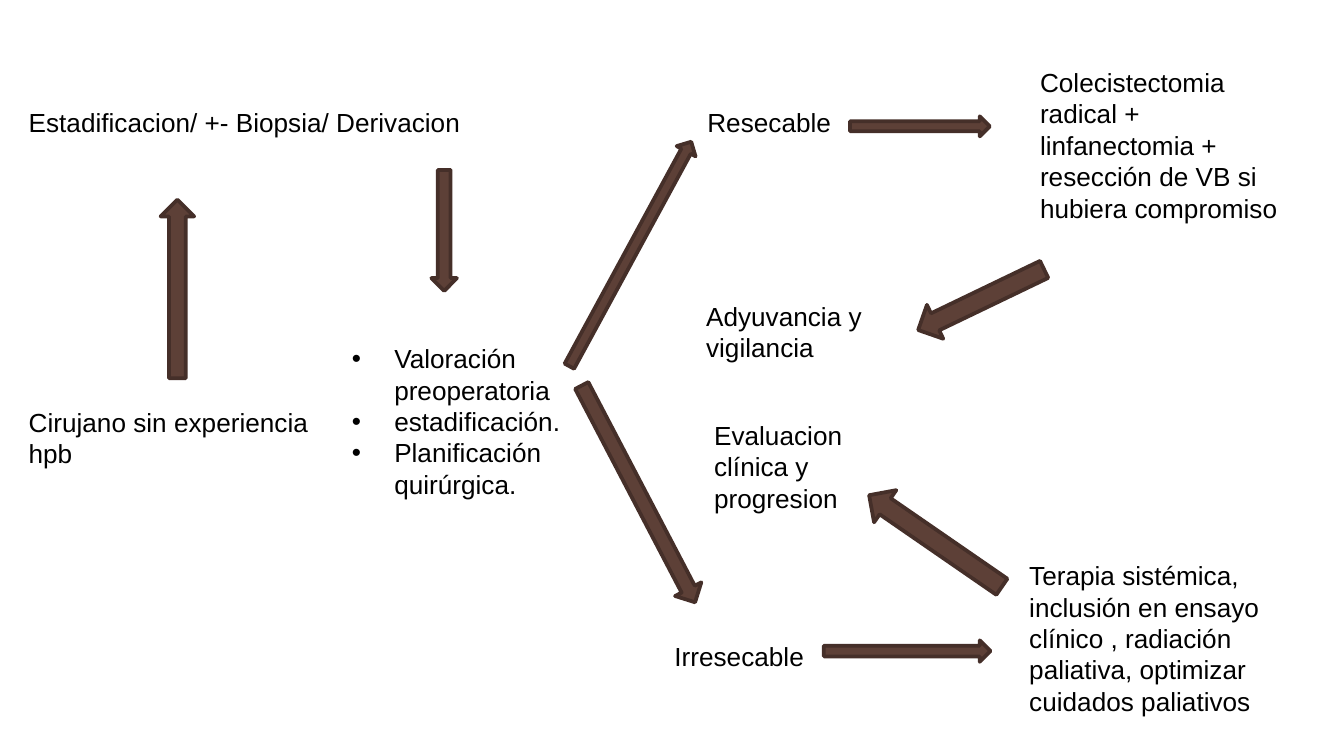
"""Build a slide with a treatment decision flow of texts and block arrows."""
from lxml import etree
from pptx import Presentation
from pptx.dml.color import RGBColor
from pptx.enum.shapes import MSO_SHAPE
from pptx.oxml.ns import qn
from pptx.util import Pt

ARROW = MSO_SHAPE.RIGHT_ARROW
PX = 4572
SLIDE = (2000, 1125)
COLORS = {"text": "000000", "arrow": "5D4037", "edge": "452F29"}
FONT = {"name": "Arial", "size": Pt(14)}
BULLET_INDENT = 63

TEXTS = [
    ((23, 595, 482, 114), ["Cirujano sin experiencia hpb"]),
    ((23, 148, 684, 68), ["Estadificacion/ +- Biopsia/ Derivacion"]),
    ((504, 500, 402, 302), ["Valoración preoperatoria", "estadificación.",
                            "Planificación quirúrgica."]),
    ((1033, 148, 392, 68), ["Resecable"]),
    ((984, 943, 388, 68), ["Irresecable"]),
    ((1528, 89, 394, 302), ["Colecistectomia radical + linfanectomia + "
                            "resección de VB si hubiera compromiso"]),
    ((1031, 437, 344, 162), ["Adyuvancia y vigilancia"]),
    ((1512, 823, 488, 302), ["Terapia sistémica, inclusión en ensayo clínico , "
                             "radiación paliativa, optimizar cuidados paliativos"]),
    ((1043, 614, 344, 208), ["Evaluacion clínica y progresion"]),
]

ARROWS = [
    ((131, 405, 266, 50), 270),
    ((571, 324, 180, 38), 90),
    ((748, 362, 380, 32), 298.5),
    ((768, 713, 364, 44), 62.4),
    ((1265, 173, 208, 30), 0),
    ((1356, 418, 208, 56), 154.3),
    ((1226, 953, 248, 32), 0),
    ((1272, 776, 240, 58), 214.6),
]


def emu(box):
    return [v * PX for v in box]


def rgb(key):
    return RGBColor.from_string(COLORS[key])


def add_bullet(p):
    pPr = p._p.get_or_add_pPr()
    pPr.set("marL", str(BULLET_INDENT * PX))
    pPr.set("indent", str(-BULLET_INDENT * PX))
    buClr = etree.SubElement(pPr, qn("a:buClr"))
    etree.SubElement(buClr, qn("a:srgbClr")).set("val", COLORS["text"])
    etree.SubElement(pPr, qn("a:buFont")).set("typeface", FONT["name"])
    etree.SubElement(pPr, qn("a:buChar")).set("char", "•")


def add_text(slide, box, lines):
    tf = slide.shapes.add_textbox(*emu(box)).text_frame
    tf.word_wrap = True
    for i, line in enumerate(lines):
        p = tf.add_paragraph() if i else tf.paragraphs[0]
        if len(lines) > 1:
            add_bullet(p)
        r = p.add_run()
        r.text = line
        for name, value in FONT.items():
            setattr(r.font, name, value)
        r.font.color.rgb = rgb("text")


def add_arrow(slide, box, angle):
    sp = slide.shapes.add_shape(ARROW, *emu(box))
    sp.rotation = angle
    sp.shadow.inherit = False
    sp.fill.solid()
    sp.fill.fore_color.rgb = rgb("arrow")
    sp.line.color.rgb = rgb("edge")
    sp.line.width = Pt(2)


def main():
    prs = Presentation()
    prs.slide_width, prs.slide_height = emu(SLIDE)
    slide = prs.slides.add_slide(prs.slide_layouts[6])
    for box, lines in TEXTS:
        add_text(slide, box, lines)
    for box, angle in ARROWS:
        add_arrow(slide, box, angle)
    prs.save("out.pptx")


if __name__ == "__main__":
    main()
